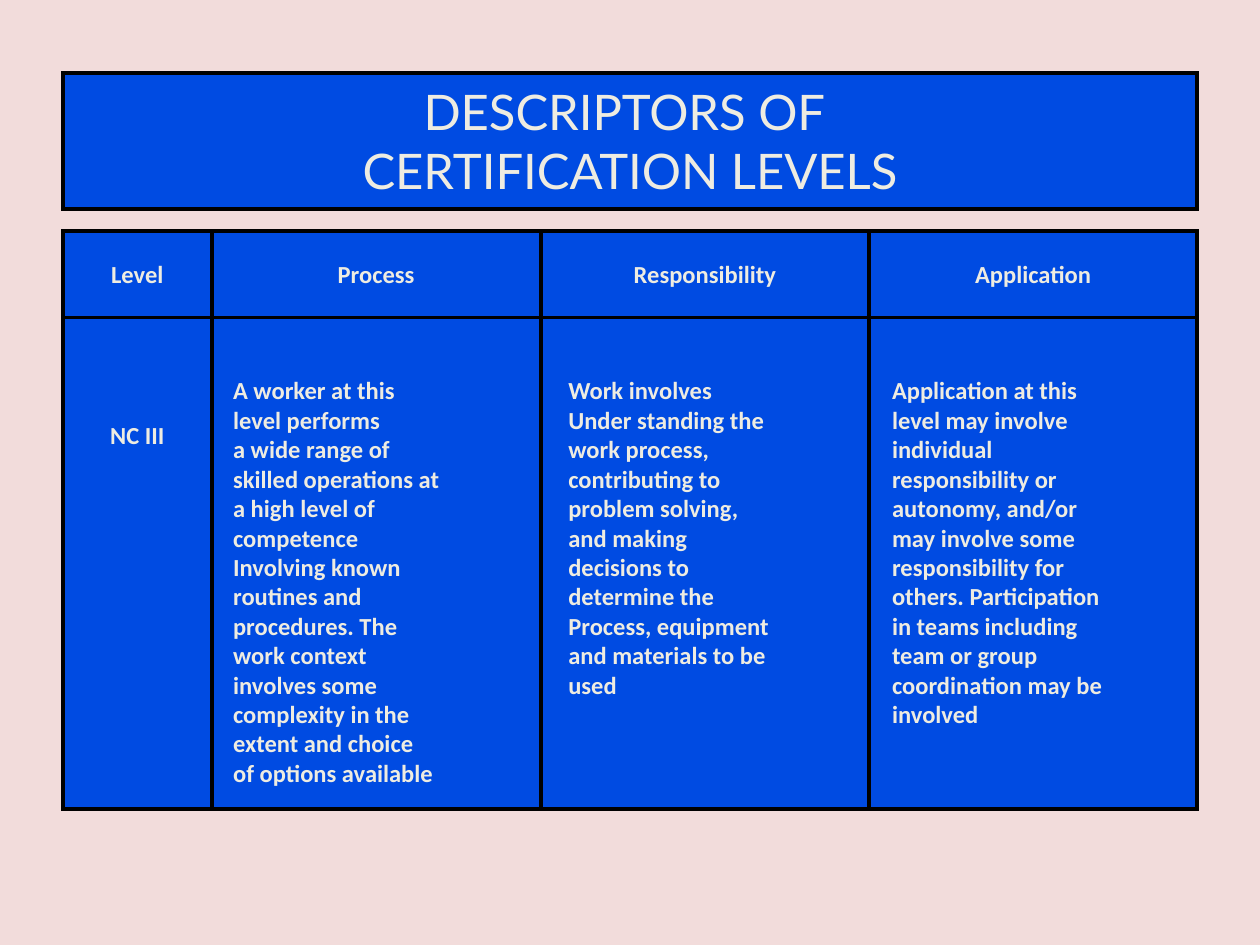
import pptx
import pptx.dml.color
import pptx.enum.shapes
import pptx.enum.text
import pptx.oxml.ns
import pptx.util
from lxml import etree

Inches, Pt = pptx.util.Inches, pptx.util.Pt
RGB = pptx.dml.color.RGBColor.from_string
Align = pptx.enum.text.PP_ALIGN
Anchor = pptx.enum.text.MSO_ANCHOR

THEME = {
    "back": "F2DCDB", "fill": "004BE2", "line": "000000", "text": "EEECE1",
    "border": 2.25,
    "title": {"name": "Lato", "size": Pt(28), "bold": False},
    "body": {"name": "Calibri", "size": Pt(14), "bold": True},
}

HEADS = ["Level", "Process", "Responsibility", "Application"]
LEVEL = [
    "NC III",
    """A worker at this
level performs
a wide range of
skilled operations at
a high level of
competence
Involving known
routines and
procedures. The
work context
involves some
complexity in the
extent and choice
of options available""",
    """Work involves
Under standing the
work process,
contributing to
problem solving,
and making
decisions to
determine the
Process, equipment
and materials to be
used""",
    """Application at this
level may involve
individual
responsibility or
autonomy, and/or
may involve some
responsibility for
others. Participation
in teams including
team or group
coordination may be
involved""",
]


def paint(box):
    """Give a box the blue fill and a black line with square corners."""
    box.fill.solid()
    box.fill.fore_color.rgb = RGB(THEME["fill"])
    box.line.color.rgb = RGB(THEME["line"])
    box.line.width = Pt(THEME["border"])
    line = box.line._get_or_add_ln()
    etree.SubElement(line, pptx.oxml.ns.qn("a:miter"), lim="800000")


def write(frame, text, look, align, layout):
    """Fill a frame with text; layout holds its anchor and margins."""
    frame.text = text
    frame.word_wrap = True
    frame.auto_size = pptx.enum.text.MSO_AUTO_SIZE.NONE
    for key, value in layout.items():
        setattr(frame, key, value)
    for para in frame.paragraphs:
        para.alignment = align
        if look == "body":
            para.line_spacing = Pt(16.8)
        for run in para.runs:
            for key, value in THEME[look].items():
                setattr(run.font, key, value)
            run.font.color.rgb = RGB(THEME["text"])


deck = pptx.Presentation()
deck.slide_width, deck.slide_height = Inches(10), Inches(7.5)
slide = deck.slides.add_slide(deck.slide_layouts[5])
slide.background.fill.solid()
slide.background.fill.fore_color.rgb = RGB(THEME["back"])

# Title
title = slide.shapes.title
place = {"left": 0.5, "top": 0.58, "width": 9, "height": 1.08}
for key, value in place.items():
    setattr(title, key, Inches(value))
paint(title)
inset = {"margin_left": Inches(0.13), "margin_right": Inches(0.13),
         "margin_top": Inches(0.07), "margin_bottom": Inches(0.07)}
write(title.text_frame, "DESCRIPTORS OF \nCERTIFICATION LEVELS", "title",
      Align.CENTER, {**inset, "vertical_anchor": Anchor.TOP})

# Grid of boxes: a row of headings above a row of descriptors
grid = slide.shapes.add_group_shape()
widths, heights = [1.18, 2.61, 2.61, 2.6], [0.69, 3.9]
indents = [0.13, 0.17, 0.22, 0.18]
top = 1.83
for r, texts in enumerate([HEADS, LEVEL]):
    left = 0.5
    for c, text in enumerate(texts):
        box = grid.shapes.add_shape(
            pptx.enum.shapes.MSO_SHAPE.RECTANGLE, Inches(left), Inches(top),
            Inches(widths[c]), Inches(heights[r]))
        box.shadow.inherit = False
        paint(box)
        layout = {**inset, "vertical_anchor": Anchor.MIDDLE}
        align = Align.CENTER
        if r > 0:
            layout["vertical_anchor"] = Anchor.TOP
            layout["margin_top"] = Inches(0.46 if c else 0.81)
            if c > 0:
                layout["margin_left"] = Inches(indents[c])
                align = Align.LEFT
        write(box.text_frame, text, "body", align, layout)
        left += widths[c]
    top += heights[r]

deck.save("out.pptx")
